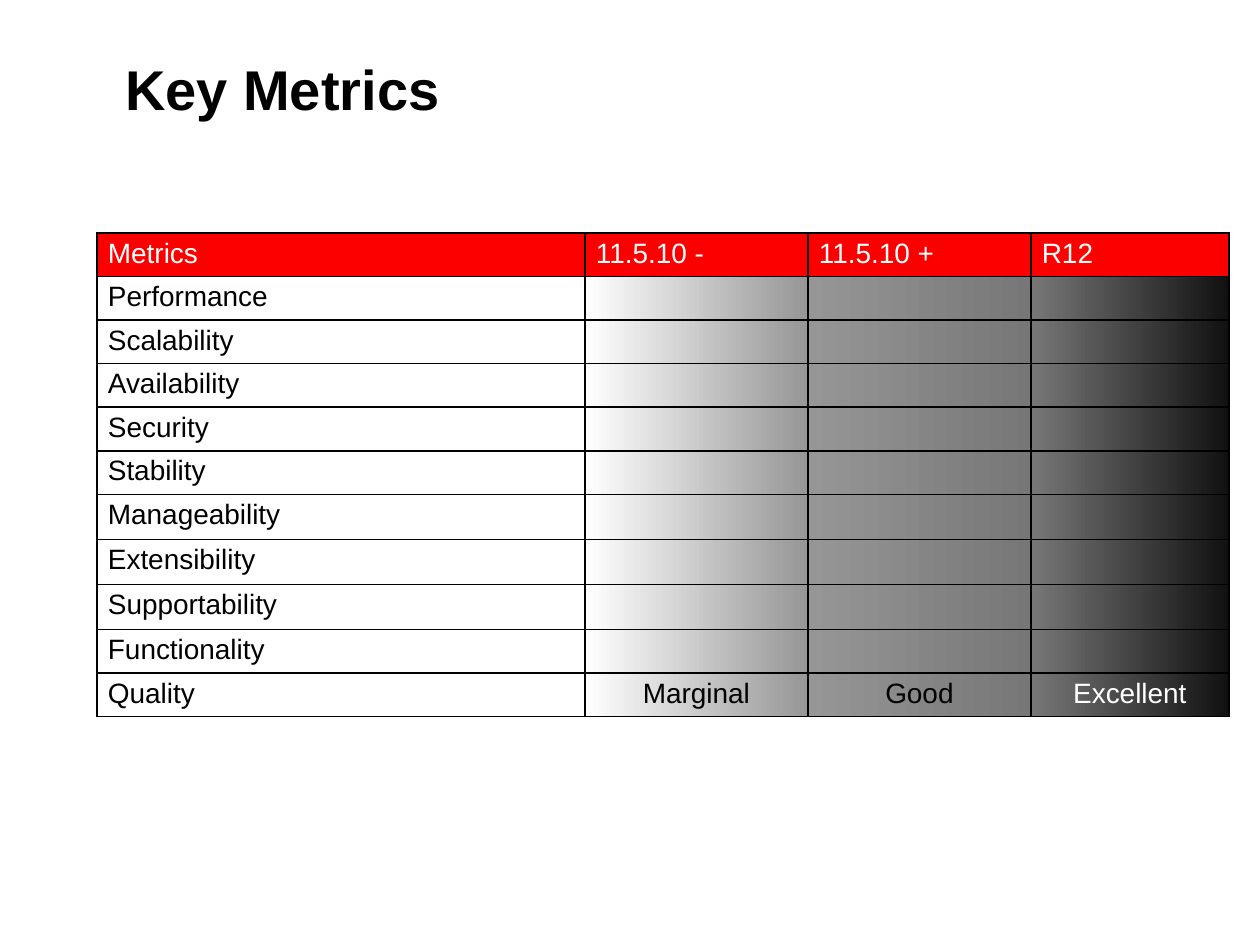
"""Build the Key Metrics slide: a table rating three releases by gradient."""
from lxml.etree import SubElement
from pptx import Presentation
from pptx.dml.color import RGBColor
from pptx.enum.text import PP_ALIGN
from pptx.oxml import parse_xml
from pptx.oxml.ns import nsdecls, qn
from pptx.util import Emu, Pt

BLACK = RGBColor(0x00, 0x00, 0x00)
WHITE = RGBColor(0xFF, 0xFF, 0xFF)
RED = RGBColor(0xFC, 0x00, 0x00)
SILVER = RGBColor(0x96, 0x96, 0x96)
GRAY = RGBColor(0x77, 0x77, 0x77)
CHARCOAL = RGBColor(0x11, 0x11, 0x11)

HEADERS = ["Metrics", "11.5.10 -", "11.5.10 +", "R12"]
METRICS = ["Performance", "Scalability", "Availability", "Security", "Stability",
           "Manageability", "Extensibility", "Supportability", "Functionality"]
RATINGS = ["Quality", "Marginal", "Good", "Excellent"]
ROWS = [HEADERS, *([metric, "", "", ""] for metric in METRICS), RATINGS]
COL_WIDTHS = [488, 223, 223, 198]
ROW_HEIGHTS = [43, 42, 43, 42, 43, 42, 45, 45, 45, 43, 43]
SHADES = [WHITE, SILVER, GRAY, CHARCOAL]


def px(n):
    return Emu(round(n * 914400 / 126))


def add_borders(cell):
    tcPr = cell._tc.get_or_add_tcPr()
    for i, side in enumerate(("lnL", "lnR", "lnT", "lnB")):
        tcPr.insert(i, parse_xml(
            f'<a:{side} {nsdecls("a")} w="{Pt(1)}"><a:solidFill>'
            f'<a:srgbClr val="{BLACK}"/></a:solidFill></a:{side}>'))


prs = Presentation()
prs.slide_width, prs.slide_height = px(1260), px(945)
s = prs.slides.add_slide(prs.slide_layouts[6])

tf = s.shapes.add_textbox(px(125), px(54), px(823), px(95)).text_frame
tf.word_wrap = True
tf.margin_left = tf.margin_right = tf.margin_top = tf.margin_bottom = 0
tf.text = "Key Metrics"
font = tf.paragraphs[0].runs[0].font
font.name, font.size, font.bold = "Arial", Pt(32), True
font.color.rgb = BLACK

table = s.shapes.add_table(len(ROWS), len(HEADERS), px(97), px(233),
                           px(sum(COL_WIDTHS)), px(sum(ROW_HEIGHTS))).table
for col, width in zip(table.columns, COL_WIDTHS):
    col.width = px(width)
for row, height in zip(table.rows, ROW_HEIGHTS):
    row.height = px(height)

for i, texts in enumerate(ROWS):
    for j, text in enumerate(texts):
        cell = table.cell(i, j)
        cell.margin_left = cell.margin_right = px(11)
        cell.margin_top = cell.margin_bottom = px(5)
        if i == 0 or j == 0:
            cell.fill.solid()
            cell.fill.fore_color.rgb = RED if i == 0 else WHITE
        else:
            cell.fill.gradient()
            cell.fill.gradient_angle = 0
            for stop, shade in zip(cell.fill.gradient_stops, SHADES[j - 1:j + 1]):
                stop.color.rgb = shade
        add_borders(cell)
        p = cell.text_frame.paragraphs[0]
        if not text:
            SubElement(p._p, qn("a:endParaRPr"), sz="1600")
            continue
        p.text = text
        if i and j:
            p.alignment = PP_ALIGN.CENTER
        font = p.runs[0].font
        font.name, font.size, font.bold = "Arial", Pt(16), False
        font.color.rgb = WHITE if i == 0 or text == "Excellent" else BLACK

prs.save("out.pptx")
